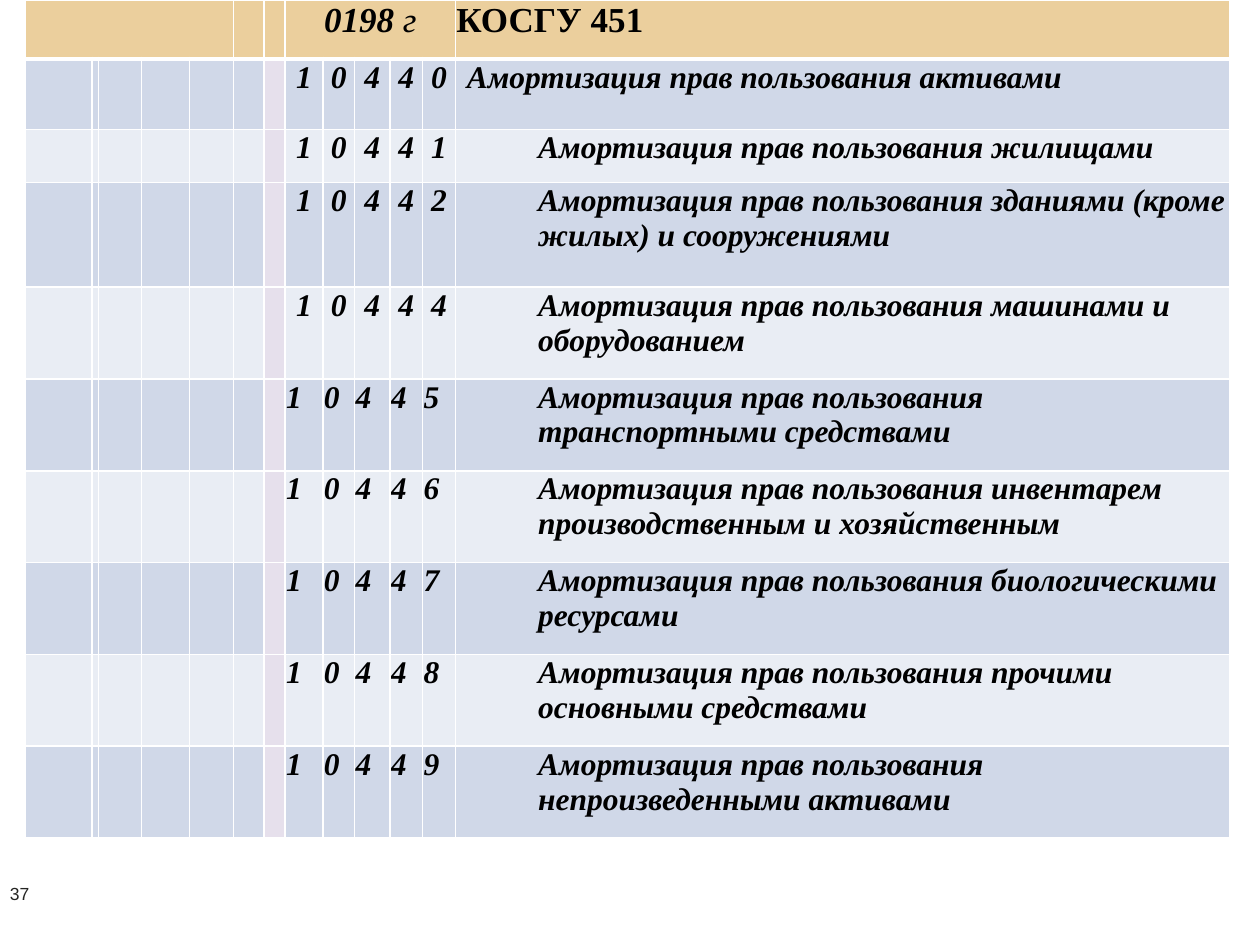
from lxml.etree import SubElement
from pptx import Presentation
from pptx.dml.color import RGBColor
from pptx.enum.text import PP_ALIGN as Align
from pptx.oxml.ns import qn
from pptx.util import Cm, Pt

BLACK = RGBColor(0x00, 0x00, 0x00)
WHITE = RGBColor(0xFF, 0xFF, 0xFF)
GRAY = RGBColor(0x25, 0x25, 0x23)
SAND = RGBColor(0xEB, 0xCF, 0x9D)
BLUE = RGBColor(0xD0, 0xD8, 0xE8)
PALE = RGBColor(0xE9, 0xED, 0xF4)
LILAC = RGBColor(0xE6, 0xE0, 0xEC)

COL_WIDTHS = [1.35, 0.14, 0.86, 0.97, 0.89, 0.61, 0.43,
              0.76, 0.64, 0.71, 0.66, 0.66, 15.62]
ROW_HEIGHTS = [1.19, 1.42, 1.07, 2.11] + [1.85] * 6
LILAC_COL, CODE_COL, NAME_COL = 6, 7, 12
CENTERED_ROWS = 4
SUBJECT = "Амортизация прав пользования "
ACCOUNTS = [
    ("10440", "активами"),
    ("10441", "жилищами"),
    ("10442", "зданиями (кроме жилых) и сооружениями"),
    ("10444", "машинами и оборудованием"),
    ("10445", "транспортными средствами"),
    ("10446", "инвентарем производственным и хозяйственным"),
    ("10447", "биологическими ресурсами"),
    ("10448", "прочими основными средствами"),
    ("10449", "непроизведенными активами"),
]


def set_font(font, size, color, name="Times New Roman", bold=None, italic=None):
    """Apply the basic character settings to a font."""
    font.size, font.name, font.bold, font.italic = Pt(size), name, bold, italic
    font.color.rgb = color


def add_border(cell, side, width):
    """Add a white line to one side of a cell."""
    ln = SubElement(cell._tc.get_or_add_tcPr(), qn(f"a:ln{side}"), w=str(Pt(width)))
    SubElement(SubElement(ln, qn("a:solidFill")), qn("a:srgbClr"), val=str(WHITE))


def style_cell(cell, row, col):
    """Set the margins, borders and fill of a cell from its position."""
    cell.margin_left = cell.margin_right = cell.margin_top = Cm(0.02)
    cell.margin_bottom = 0
    for side in "LRTB":
        under_header = (row, side) in ((0, "B"), (1, "T"))
        add_border(cell, side, 3 if under_header else 1)
    cell.fill.solid()
    if row == 0:
        color = SAND
    elif col == LILAC_COL:
        color = LILAC
    else:
        color = BLUE if row % 2 else PALE
    cell.fill.fore_color.rgb = color


def write_cell(cell, text, size=18, italic=True, align=Align.LEFT):
    """Write one bold paragraph into a cell and return it."""
    p = cell.text_frame.paragraphs[0]
    p.alignment = align
    p.add_run().text = text
    set_font(p.runs[0].font, size, BLACK, bold=True, italic=italic)
    return p


def write_header(table):
    """Merge and fill the header row."""
    table.cell(0, 0).merge(table.cell(0, 4))
    table.cell(0, CODE_COL).merge(table.cell(0, NAME_COL - 1))
    p = write_cell(table.cell(0, CODE_COL), "0198 ", 20, align=Align.CENTER)
    r = p.add_run()
    r.text = "г"
    set_font(r.font, 20, BLACK, bold=False, italic=True)
    write_cell(table.cell(0, NAME_COL), "КОСГУ 451", 20, italic=False)


def write_account(table, row, code, name):
    """Write the code digits and the name of one account."""
    align = Align.CENTER if row <= CENTERED_ROWS else Align.LEFT
    for col, digit in enumerate(code, CODE_COL):
        write_cell(table.cell(row, col), digit, align=align)
    cell = table.cell(row, NAME_COL)
    cell.margin_left = Cm(0.23 if row == 1 else 1.67)
    write_cell(cell, SUBJECT + name)


def add_accounts_table(slide):
    """Add the table of depreciation accounts."""
    frame = slide.shapes.add_table(
        len(ROW_HEIGHTS), len(COL_WIDTHS), Cm(0.5), 0,
        Cm(sum(COL_WIDTHS)), Cm(sum(ROW_HEIGHTS)))
    table = frame.table
    table.first_row = table.horz_banding = False
    for column, width in zip(table.columns, COL_WIDTHS):
        column.width = Cm(width)
    for i, height in enumerate(ROW_HEIGHTS):
        table.rows[i].height = Cm(height)
        for j in range(len(COL_WIDTHS)):
            style_cell(table.cell(i, j), i, j)
    write_header(table)
    for row, (code, name) in enumerate(ACCOUNTS, 1):
        write_account(table, row, code, name)


def add_page_number(slide, number):
    """Add the page number at the bottom left."""
    tf = slide.shapes.add_textbox(Cm(0.2), Cm(17.81), Cm(13.1), Cm(0.7)).text_frame
    tf.word_wrap = True
    tf.margin_left = tf.margin_right = tf.margin_top = tf.margin_bottom = 0
    p = tf.paragraphs[0]
    p.text = number
    p.line_spacing = Pt(11.5)
    set_font(p.font, 10, GRAY, "Arial")


def main():
    """Build the slide and save it."""
    prs = Presentation()
    prs.slide_width, prs.slide_height = Cm(25.4), Cm(19.05)
    s = prs.slides.add_slide(prs.slide_layouts[6])
    add_page_number(s, "37")
    add_accounts_table(s)
    prs.save("out.pptx")


if __name__ == "__main__":
    main()
